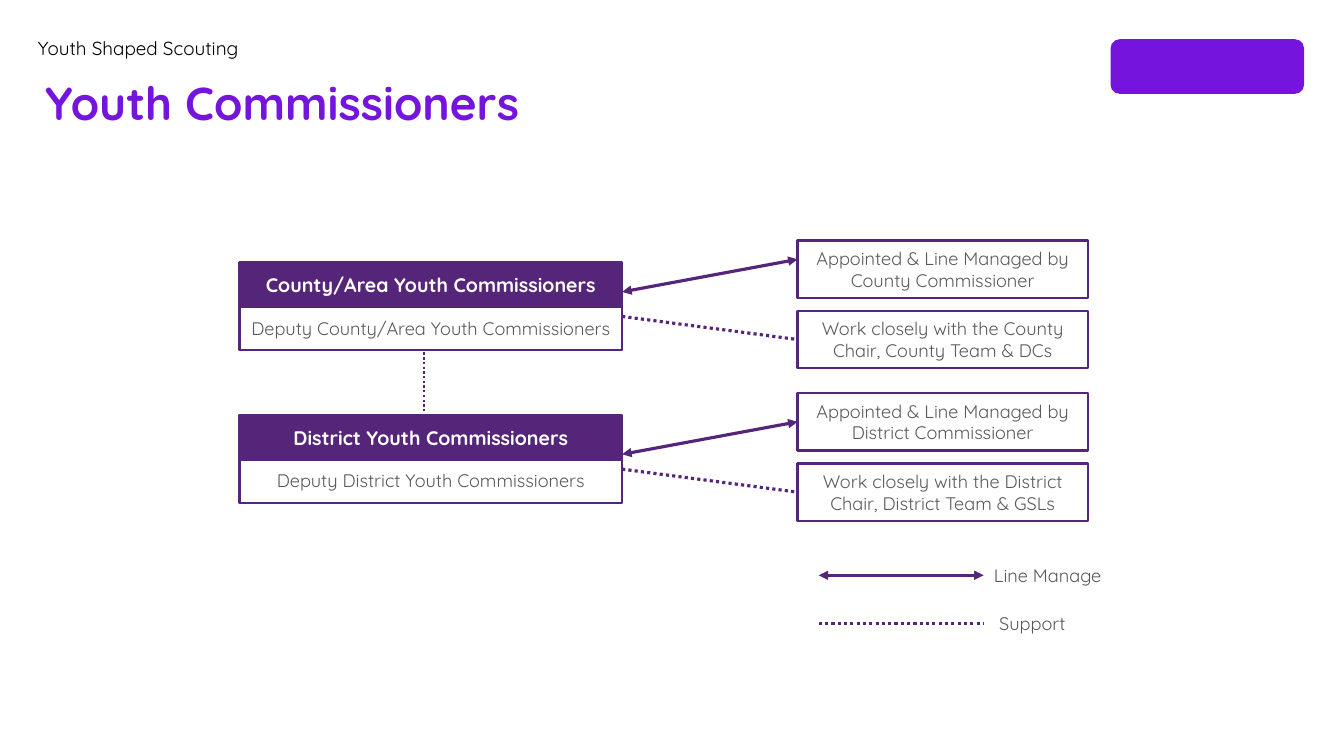
from dataclasses import dataclass

from lxml import etree
from pptx import Presentation
from pptx.dml.color import RGBColor
from pptx.enum.dml import MSO_LINE
from pptx.enum.shapes import MSO_CONNECTOR, MSO_SHAPE
from pptx.enum.text import MSO_ANCHOR, PP_ALIGN
from pptx.oxml.ns import qn
from pptx.util import Pt

STRAIGHT = MSO_CONNECTOR.STRAIGHT
PROCESS = MSO_SHAPE.FLOWCHART_PROCESS
ROUNDED = MSO_SHAPE.ROUNDED_RECTANGLE
DOTTED = MSO_LINE.ROUND_DOT
MIDDLE, BOTTOM = MSO_ANCHOR.MIDDLE, MSO_ANCHOR.BOTTOM
LEFT, CENTER = PP_ALIGN.LEFT, PP_ALIGN.CENTER
LEFT_SIDE = 1


@dataclass(frozen=True)
class Theme:
    font: str = "Quicksand"
    violet: RGBColor = RGBColor(0x74, 0x14, 0xDC)
    purple: RGBColor = RGBColor(0x55, 0x25, 0x79)
    grey: RGBColor = RGBColor(0x59, 0x59, 0x59)
    black: RGBColor = RGBColor(0, 0, 0)
    white: RGBColor = RGBColor(255, 255, 255)
    title: float = 44
    kicker: float = 18
    role: float = 18.7
    body: float = 17.3
    border: float = 2.25
    link: float = 3


THEME = Theme()


def write(frame, text, size, color, bold=False, align=LEFT):
    frame.word_wrap = True
    frame.text = text
    paragraph = frame.paragraphs[0]
    paragraph.alignment = align
    font = paragraph.runs[0].font
    font.name, font.size, font.bold = THEME.font, Pt(size), bold
    font.color.rgb = color


def add_label(slide, box, text, size, color, bold=False):
    label = slide.shapes.add_textbox(*map(Pt, box))
    write(label.text_frame, text, size, color, bold)
    return label.text_frame


def add_card(slide, box, text, header=False):
    card = slide.shapes.add_shape(PROCESS, *map(Pt, box))
    card.shadow.inherit = False
    card.line.color.rgb = THEME.purple
    card.line.width = Pt(THEME.border)
    card.text_frame.vertical_anchor = MIDDLE
    if header:
        card.fill.solid()
        card.fill.fore_color.rgb = THEME.purple
        write(card.text_frame, text, THEME.role, THEME.white, True, CENTER)
    else:
        card.fill.background()
        write(card.text_frame, text, THEME.body, THEME.grey, False, CENTER)
    return card


def add_link(slide, start, end, width=THEME.link, support=False):
    link = slide.shapes.add_connector(STRAIGHT, *map(Pt, (*start, *end)))
    link.line.color.rgb = THEME.purple
    link.line.width = Pt(width)
    if support:
        link.line.dash_style = DOTTED
    else:
        outline = link.line._get_or_add_ln()
        for tip in ("a:headEnd", "a:tailEnd"):
            etree.SubElement(outline, qn(tip), type="triangle")
    etree.SubElement(link._element.spPr, qn("a:effectLst"))
    return link


def add_heading(slide, box, kicker, title):
    left, top, width, height = box
    add_label(slide, (left, top + 32.4, width, height - 32.4),
              title, THEME.title, THEME.violet, True)
    frame = add_label(slide, (left, top, 603.4, 21.6),
                      kicker, THEME.kicker, THEME.black)
    frame.margin_left = frame.margin_right = 0
    frame.margin_top = frame.margin_bottom = 0
    frame.vertical_anchor = BOTTOM


def add_emblem(slide, box):
    emblem = slide.shapes.add_shape(ROUNDED, *map(Pt, box))
    emblem.shadow.inherit = False
    emblem.fill.solid()
    emblem.fill.fore_color.rgb = THEME.violet
    emblem.line.fill.background()


def add_level(slide, box, role, deputy, manager, partners,
              manage_drop, manager_joined):
    left, top, width, height = box
    role_width, role_height = 364.3, 42.5
    duty_width, duty_height = 276.5, 54.7
    role_right, duty_left = left + role_width, left + width - duty_width
    role_top = top + 20.9
    partners_top = top + height - duty_height

    add_card(slide, (left, role_top, role_width, role_height), role, True)
    add_card(slide, (left, role_top + 41, role_width, role_height), deputy)
    manager_card = add_card(
        slide, (duty_left, top, duty_width, duty_height), manager)
    partners_card = add_card(
        slide, (duty_left, partners_top, duty_width, duty_height), partners)

    manage_top = role_top + manage_drop
    manage = add_link(slide, (role_right, manage_top),
                      (duty_left, manage_top - 31))
    if manager_joined:
        manage.end_connect(manager_card, LEFT_SIDE)
    support = add_link(slide, (role_right, role_top + 51.5),
                       (duty_left, partners_top + duty_height / 2),
                       support=True)
    support.end_connect(partners_card, LEFT_SIDE)


def add_legend(slide, box):
    left, top, width, height = box
    entries = (("Line Manage", 159.8, False), ("Support", 164.8, True))
    for row, (meaning, indent, support) in enumerate(entries):
        middle = top + 14.4 + row * (height - 28.1)
        add_link(slide, (left, middle), (left + 157, middle), support=support)
        add_label(slide, (left + indent, middle - 14.4, 154.1, 28.1),
                  meaning, THEME.body, THEME.grey)


def main():
    deck = Presentation()
    deck.slide_width, deck.slide_height = Pt(1280), Pt(720)
    slide = deck.slides.add_slide(deck.slide_layouts[6])

    add_heading(slide, (36, 34.6, 739.4, 92.9),
                "Youth Shaped Scouting", "Youth Commissioners")
    add_emblem(slide, (1057.7, 37.4, 184.3, 52))

    levels = (
        ("County/Area Youth Commissioners",
         "Deputy County/Area Youth Commissioners",
         "Appointed & Line Managed by County Commissioner",
         "Work closely with the County Chair, County Team & DCs", 28.1, False),
        ("District Youth Commissioners",
         "Deputy District Youth Commissioners",
         "Appointed & Line Managed by District Commissioner",
         "Work closely with the District Chair, District Team & GSLs",
         37.4, True),
    )
    for row, level in enumerate(levels):
        add_level(slide, (228.2, 229 + row * 145.4, 807.9, 121.7), *level)
    add_link(slide, (403.9, 391.7), (403.9, 334.1), THEME.border, True)
    add_legend(slide, (779.8, 533.5, 314, 74.2))

    deck.save("out.pptx")


if __name__ == "__main__":
    main()
